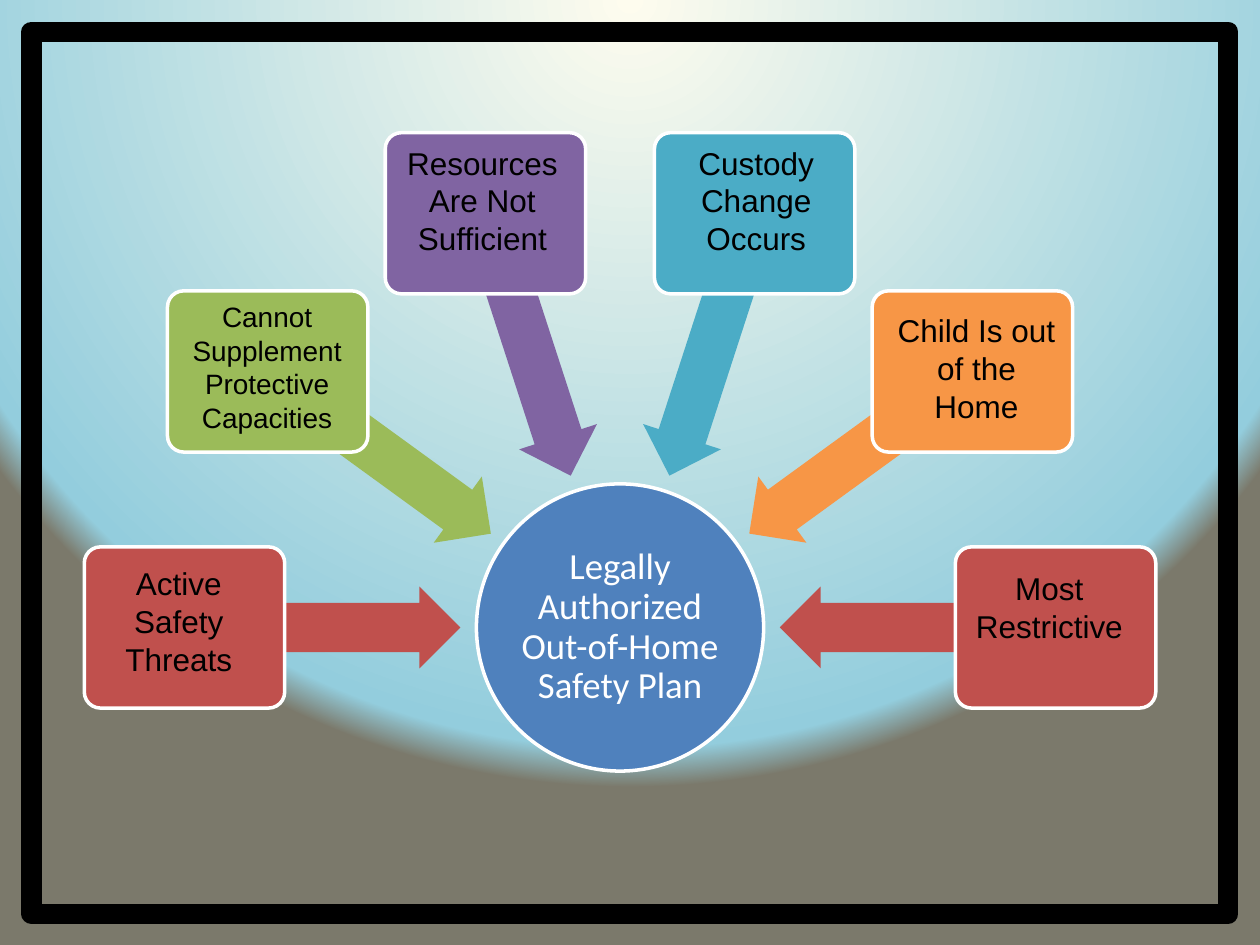
"""Build a slide of six safety conditions pointing at a central plan."""
from dataclasses import dataclass
from math import cos, radians, sin
from typing import Any

from pptx import Presentation as Deck
from pptx.dml.color import RGBColor as Rgb
from pptx.enum.shapes import MSO_SHAPE as Kind
from pptx.enum.text import MSO_ANCHOR as Anchor, MSO_AUTO_SIZE as Auto, PP_ALIGN as Align
from pptx.oxml import parse_xml
from pptx.oxml.ns import nsdecls, qn
from pptx.util import Cm, Pt

HUE = {
    "blue": "4F81BD", "red": "C0504D", "green": "9BBB59", "purple": "8064A2",
    "teal": "4BACC6", "orange": "F79646", "white": "FFFFFF", "black": "000000",
    "cream": "FEFCEE", "sky": "93CDDD", "stone": "7B796B",
}
MID_X, MID_Y = 12.5, 12.65
BOX_RAD, ARROW_RAD = 8.78, 6.0
BOX_W, BOX_H = 4.04, 3.25
ARROW_W, ARROW_H = 5.56, 1.65
START, STEP = 180, 36
HUB, HUB_TEXT = 5.79, 4.09
LABEL_W = 3.81


@dataclass(frozen=True)
class Spoke:
    """One condition: its colour, wording and label place in centimetres."""
    hue: str
    text: str
    left: float
    top: float
    high: float = 2.57
    size: int = 18


SPOKES = [
    Spoke("red", "Active Safety Threats", 1.7, 11.25),
    Spoke("green", "Cannot Supplement Protective Capacities", 3.48, 5.92, 3.0, 16),
    Spoke("purple", "Resources Are Not Sufficient", 7.82, 2.77),
    Spoke("teal", "Custody Change Occurs", 13.34, 2.77),
    Spoke("orange", "Child Is out of the Home", 17.78, 6.15),
    Spoke("red", "Most Restrictive", 19.25, 11.35, 1.8),
]


def set_all(item: Any, form: dict[str, Any]) -> None:
    """Set each named attribute on the item."""
    for name, value in form.items():
        setattr(item, name, value)


def color(name: str) -> Rgb:
    """Look up a colour by name."""
    return Rgb.from_string(HUE[name])


def add_form(shapes: Any, kind: Kind, x: float, y: float, wide: float, high: float,
             fill: str | None = None, line: str | None = None, weight: float = 2) -> Any:
    """Draw a preset shape around a centre point."""
    form = shapes.add_shape(kind, Cm(x - wide / 2), Cm(y - high / 2), Cm(wide), Cm(high))
    form.shadow.inherit = False
    if fill:
        form.fill.solid()
        form.fill.fore_color.rgb = color(fill)
    else:
        form.fill.background()
    if line:
        form.line.color.rgb = color(line)
        form.line.width = Pt(weight)
    else:
        form.line.fill.background()
    return form


def add_text(shapes: Any, text: str, place: tuple[float, ...], font: dict[str, Any],
             hue: str, frame: dict[str, Any], para: dict[str, Any]) -> None:
    """Add a wrapped, centred text box."""
    body = shapes.add_textbox(*map(Cm, place)).text_frame
    set_all(body, {"word_wrap": True} | frame)
    line = body.paragraphs[0]
    set_all(line, {"alignment": Align.CENTER} | para)
    run = line.add_run()
    run.text = text
    set_all(run.font, font)
    run.font.color.rgb = color(hue)


def add_hub(shapes: Any) -> None:
    """Draw the central circle and its words."""
    add_form(shapes, Kind.OVAL, MID_X, MID_Y, HUB, HUB, "blue", "white")
    inset = {f"margin_{side}": Cm(0.03) for side in ("left", "top", "right", "bottom")}
    place = (MID_X - HUB_TEXT / 2, MID_Y - HUB_TEXT / 2, HUB_TEXT, HUB_TEXT)
    add_text(shapes, "Legally Authorized Out-of-Home Safety Plan", place,
             {"name": "Calibri", "size": Pt(21)}, "white",
             inset | {"vertical_anchor": Anchor.MIDDLE}, {"line_spacing": 0.9})


def add_spoke(shapes: Any, spoke: Spoke, angle: int) -> None:
    """Draw an arrow and its box on the ring at an angle."""
    dx, dy = cos(radians(angle)), sin(radians(angle))
    arrow = add_form(shapes, Kind.LEFT_ARROW, MID_X + ARROW_RAD * dx,
                     MID_Y + ARROW_RAD * dy, ARROW_W, ARROW_H, spoke.hue)
    arrow.rotation = angle % 360
    arrow.adjustments[0], arrow.adjustments[1] = 0.6, 0.5
    box = add_form(shapes, Kind.ROUNDED_RECTANGLE, MID_X + BOX_RAD * dx,
                   MID_Y + BOX_RAD * dy, BOX_W, BOX_H, spoke.hue, "white")
    box.adjustments[0] = 0.1


def add_label(shapes: Any, spoke: Spoke) -> None:
    """Write the words of one condition."""
    add_text(shapes, spoke.text, (spoke.left, spoke.top, LABEL_W, spoke.high),
             {"name": "Arial", "size": Pt(spoke.size)}, "black",
             {"auto_size": Auto.SHAPE_TO_FIT_TEXT}, {})


def paint_back(slide: Any) -> None:
    """Give the slide a round gradient centred above its top edge."""
    slide.background.fill.solid()
    stops = "".join(
        f'<a:gs pos="{pos * 1000}"><a:srgbClr val="{HUE[name]}"/></a:gs>'
        for pos, name in ((0, "cream"), (95, "sky"), (100, "stone")))
    grad = parse_xml(
        f'<a:gradFill {nsdecls("a")} rotWithShape="1"><a:gsLst>{stops}</a:gsLst>'
        '<a:path path="circle"><a:fillToRect l="50000" t="-80000" r="50000" b="180000"/>'
        '</a:path></a:gradFill>')
    back = slide.element.find(".//" + qn("p:bgPr"))
    back.replace(back[0], grad)


def main() -> None:
    """Build and save the deck."""
    deck = Deck()
    set_all(deck, {"slide_width": Cm(25.4), "slide_height": Cm(19.05)})
    slide = deck.slides.add_slide(deck.slide_layouts[6])
    paint_back(slide)
    wheel = slide.shapes.add_group_shape().shapes
    add_hub(wheel)
    for i, spoke in enumerate(SPOKES):
        add_spoke(wheel, spoke, START + STEP * i)
    frame = add_form(slide.shapes, Kind.RECTANGLE, 12.7, 9.53, 24.13, 17.78,
                     line="black", weight=11.5)
    frame.line.fill.fore_color.rgb = color("black")
    edge = frame.element.spPr.find(qn("a:ln"))
    edge.append(parse_xml(f'<a:round {nsdecls("a")}/>'))
    for spoke in SPOKES:
        add_label(slide.shapes, spoke)
    deck.save("out.pptx")


if __name__ == "__main__":
    main()
